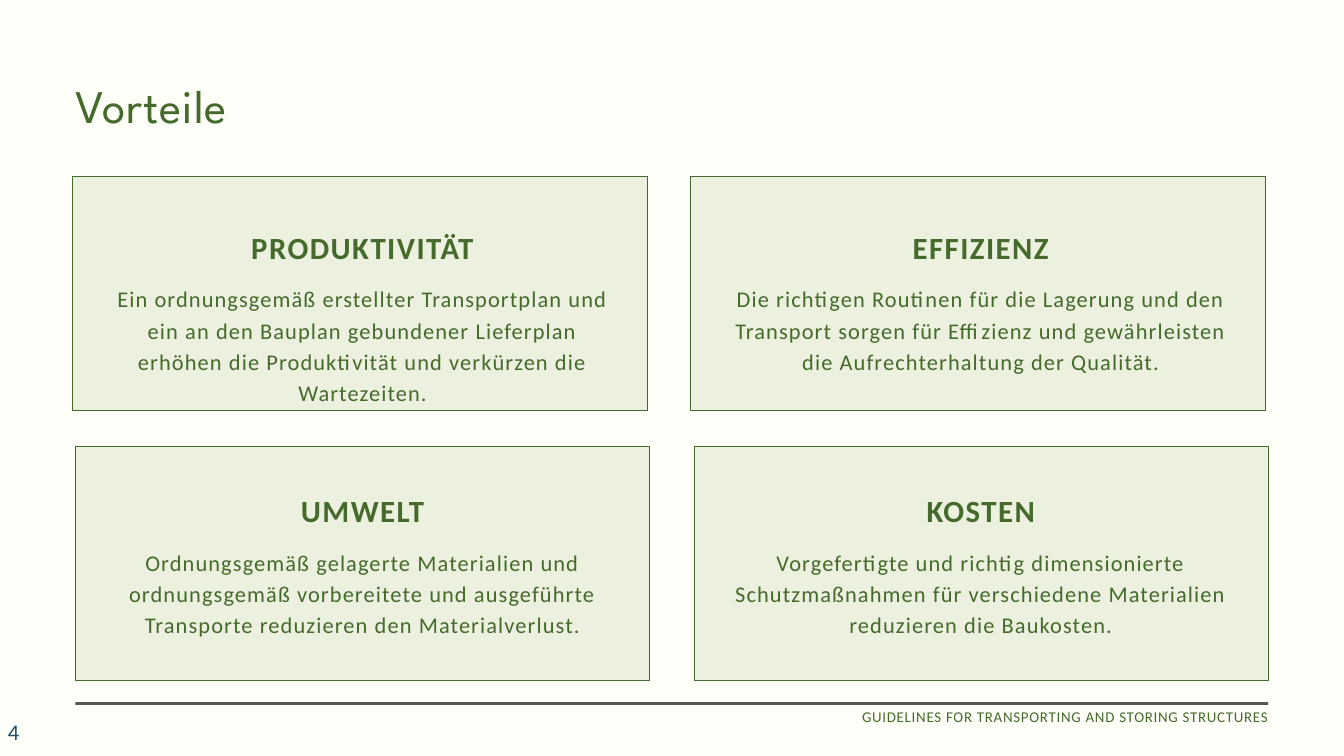
import pptx
import pptx.dml.color
import pptx.enum.shapes
import pptx.enum.text
import pptx.util
from dataclasses import dataclass

EMU_PER_PX = 9144  # 100 px to the inch
ALIGN = pptx.enum.text.PP_ALIGN
ANCHOR = pptx.enum.text.MSO_ANCHOR
AUTO_SIZE = pptx.enum.text.MSO_AUTO_SIZE


@dataclass(frozen=True)
class Theme:
    background: str = "FEFFF8"
    green: str = "456A2C"
    card: str = "EBF1DE"
    rule: str = "52584D"
    number: str = "1E4D65"
    title_font: str = "League Spartan"
    body_font: str = "Calibri"
    title_size: int = 50
    heading_size: int = 33
    body_size: int = 24
    footer_size: int = 16


THEME = Theme()

# Each card: box left and top, text left, heading top, heading, body, body height
CARDS = [
    (112, 664, 170, 730, "UMWELT",
     "Ordnungsgemäß gelagerte Materialien und ordnungsgemäß vorbereitete und "
     "ausgeführte Transporte reduzieren den Materialverlust.", 140),
    (108, 262, 170, 338, "PRODUKTIVITÄT",
     "Ein ordnungsgemäß erstellter Transportplan und ein an den Bauplan gebundener "
     "Lieferplan erhöhen die Produktivität und verkürzen die Wartezeiten.", 187),
    (1028, 262, 1090, 338, "EFFIZIENZ",
     "Die richtigen Routinen für die Lagerung und den Transport sorgen für Effizienz "
     "und gewährleisten die Aufrechterhaltung der Qualität.", 187),
    (1033, 664, 1090, 730, "KOSTEN",
     "Vorgefertigte und richtig dimensionierte Schutzmaßnahmen für verschiedene "
     "Materialien reduzieren die Baukosten.", 140),
]


def px(length):
    return pptx.util.Emu(length * EMU_PER_PX)


def color(value):
    return pptx.dml.color.RGBColor.from_string(value)


def write_text(shape, text, *, size, font=THEME.body_font, fill=THEME.green, bold=False,
               tracking=0, leading=None, align=ALIGN.LEFT, anchor=ANCHOR.TOP, inset=0,
               auto_size=AUTO_SIZE.SHAPE_TO_FIT_TEXT):
    """Fill a shape with one formatted paragraph; tracking and leading are in points."""
    frame = shape.text_frame
    frame.word_wrap = True
    frame.auto_size = auto_size
    frame.vertical_anchor = anchor
    if inset is not None:
        frame.margin_left = frame.margin_right = px(inset)
        frame.margin_top = frame.margin_bottom = px(inset)
    paragraph = frame.paragraphs[0]
    paragraph.alignment = align
    if leading:
        paragraph.line_spacing = pptx.util.Pt(leading)
    run = paragraph.add_run()
    run.text = text
    run.font.name = font
    run.font.size = pptx.util.Pt(size)
    run.font.bold = bold
    run.font.color.rgb = color(fill)
    run._r.get_or_add_rPr().set("spc", str(round(tracking * 100)))


def add_text(shapes, left, top, width, height, text, **text_format):
    box = shapes.add_textbox(px(left), px(top), px(width), px(height))
    write_text(box, text, **text_format)


def add_rectangle(slide, left, top, width, height, fill, line=None):
    shape = slide.shapes.add_shape(pptx.enum.shapes.MSO_SHAPE.RECTANGLE,
                                   px(left), px(top), px(width), px(height))
    shape.shadow.inherit = False
    shape.fill.solid()
    shape.fill.fore_color.rgb = color(fill)
    if line:
        shape.line.color.rgb = color(line)
        shape.line.width = pptx.util.Pt(0.75)
    else:
        shape.line.fill.background()


def add_title(slide, text):
    title = slide.shapes.title
    title.left, title.top, title.width, title.height = px(112), px(105), px(775), px(94)
    write_text(title, text, size=THEME.title_size, font=THEME.title_font,
               tracking=1, leading=66.8)


def add_card(slide, left, top, text_left, heading_top, heading, body, body_height):
    add_rectangle(slide, left, top, 855, 348, THEME.card, THEME.green)
    group = slide.shapes.add_group_shape()
    add_text(group.shapes, text_left, heading_top, 739, 56, heading,
             size=THEME.heading_size, bold=True, tracking=1.6, leading=41.2,
             align=ALIGN.CENTER)
    add_text(group.shapes, text_left, heading_top + 80, 739, body_height, body,
             size=THEME.body_size, tracking=1.2, leading=33.6, align=ALIGN.CENTER)


def add_footer(slide, number, text):
    add_rectangle(slide, 112, 1045, 1775, 4, THEME.rule)
    add_text(slide.shapes, 2, 1069, 233, 40, number, size=THEME.body_size,
             fill=THEME.number, tracking=1.2, anchor=ANCHOR.MIDDLE, inset=None,
             auto_size=AUTO_SIZE.NONE)
    add_text(slide.shapes, 1056, 1049, 832, 90, text, size=THEME.footer_size,
             tracking=0.8, leading=22.4, align=ALIGN.RIGHT)


def main():
    presentation = pptx.Presentation()
    presentation.slide_width, presentation.slide_height = px(2000), px(1125)
    slide = presentation.slides.add_slide(presentation.slide_layouts[5])  # Title Only
    slide.background.fill.solid()
    slide.background.fill.fore_color.rgb = color(THEME.background)

    add_title(slide, "Vorteile")
    for card in CARDS:
        add_card(slide, *card)
    add_footer(slide, "4", "GUIDELINES FOR TRANSPORTING AND STORING STRUCTURES")

    presentation.save("out.pptx")


if __name__ == "__main__":
    main()
